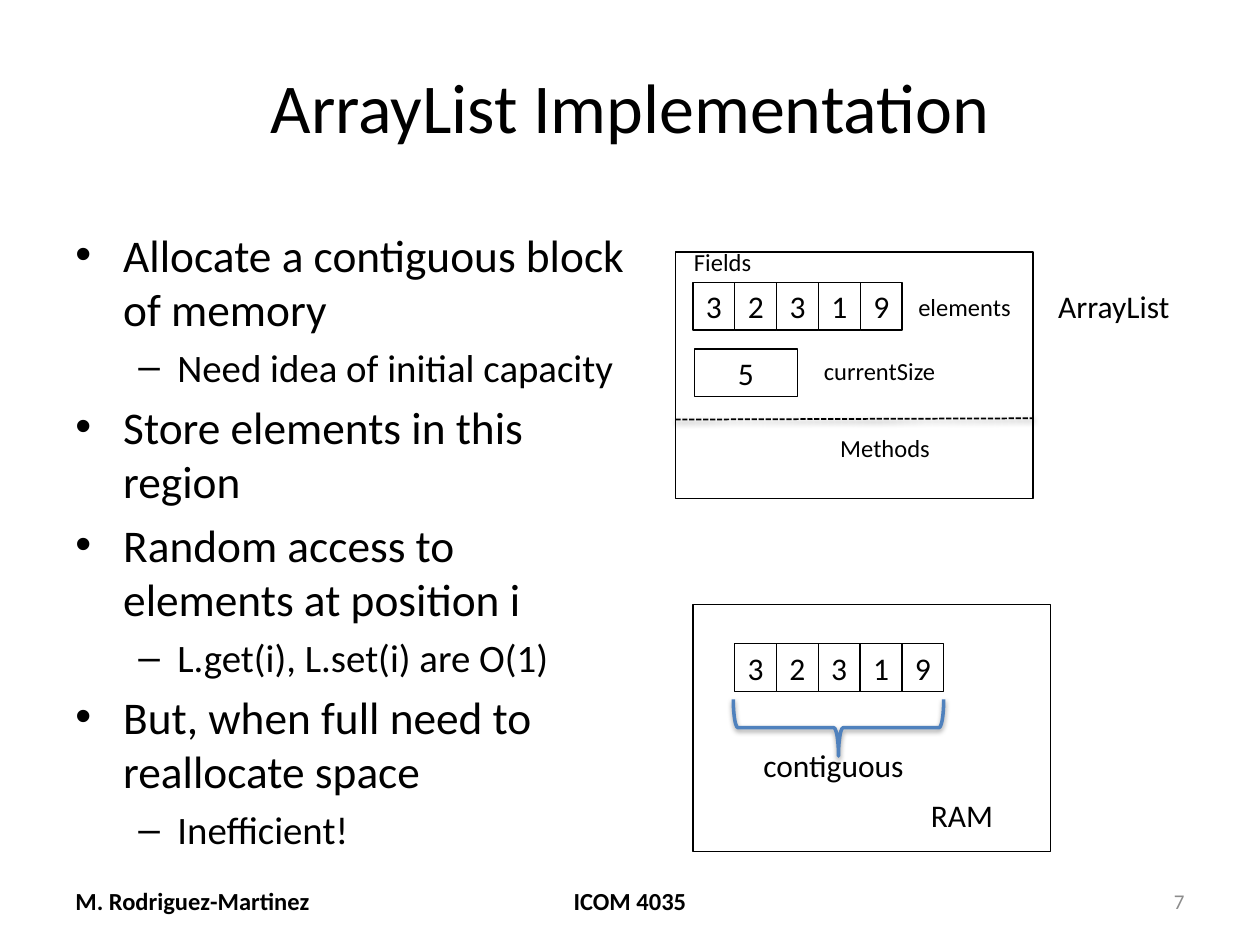
from dataclasses import dataclass

from lxml import etree
from pptx import Presentation
from pptx.dml.color import RGBColor
from pptx.enum.dml import MSO_LINE
from pptx.enum.shapes import MSO_CONNECTOR, MSO_SHAPE
from pptx.enum.text import MSO_ANCHOR, PP_ALIGN
from pptx.oxml.ns import qn
from pptx.util import Inches, Pt

RECT, BRACE = MSO_SHAPE.RECTANGLE, MSO_SHAPE.LEFT_BRACE
LEFT, MID, RIGHT = PP_ALIGN.LEFT, PP_ALIGN.CENTER, PP_ALIGN.RIGHT
TOP, CENTER = MSO_ANCHOR.TOP, MSO_ANCHOR.MIDDLE
DASH = MSO_LINE.SQUARE_DOT


@dataclass(frozen=True)
class Theme:
    face: str = "Calibri"
    ink: RGBColor = RGBColor(0, 0, 0)
    paper: RGBColor = RGBColor(255, 255, 255)
    gray: RGBColor = RGBColor(0x8C, 0x8C, 0x8C)
    blue: RGBColor = RGBColor(0x4F, 0x81, 0xBD)
    title: float = 40
    body: tuple = (25.9, 22.2)
    label: float = 18
    small: float = 14
    page: float = 12


T = Theme()
VALUES = "32319"
POINTS = [
    (0, "Allocate a contiguous block of memory"),
    (1, "Need idea of initial capacity"),
    (0, "Store elements in this region"),
    (0, "Random access to elements at position i"),
    (1, "L.get(i), L.set(i) are O(1)"),
    (0, "But, when full need to reallocate space"),
    (1, "Inefficient!"),
]
# Bullet sign, left margin and hanging indent of each level
LEVELS = [("•", 0.38, -0.38), ("–", 0.81, -0.31)]


def style(para, size, color=T.ink, align=LEFT, bold=False):
    para.alignment = align
    font = para.font
    font.name, font.size, font.bold = T.face, Pt(size), bold
    font.color.rgb = color


def add_text(slide, box, text, size, color=T.ink, align=LEFT,
             anchor=TOP, bold=False, wrap=False):
    frame = slide.shapes.add_textbox(*map(Inches, box)).text_frame
    frame.word_wrap = wrap
    frame.vertical_anchor = anchor
    frame.text = text
    style(frame.paragraphs[0], size, color, align, bold)


def add_box(slide, box, text=""):
    shape = slide.shapes.add_shape(RECT, *map(Inches, box))
    shape.shadow.inherit = False
    shape.fill.solid()
    shape.fill.fore_color.rgb = T.paper
    shape.line.color.rgb = T.ink
    shape.line.width = Pt(0.75)
    if text:
        frame = shape.text_frame
        frame.vertical_anchor = CENTER
        frame.text = text
        style(frame.paragraphs[0], T.label, align=MID)


def add_shadow(shape):
    """Cast a soft shadow straight down; call after the line is set."""
    effects = etree.SubElement(shape._element.spPr, qn("a:effectLst"))
    outer = etree.SubElement(effects, qn("a:outerShdw"), blurRad=str(Pt(3.1)),
                             dist=str(Pt(1.6)), dir="5400000", rotWithShape="0")
    color = etree.SubElement(outer, qn("a:srgbClr"), val=str(T.ink))
    etree.SubElement(color, qn("a:alpha"), val="38000")


def add_cells(slide, box):
    x, y, w, h = box
    step = w / len(VALUES)
    for i, value in enumerate(VALUES):
        add_box(slide, (x + i * step, y, step, h), value)


def add_points(slide, box):
    frame = slide.shapes.add_textbox(*map(Inches, box)).text_frame
    frame.word_wrap = True
    for i, (level, text) in enumerate(POINTS):
        para = frame.paragraphs[0] if i == 0 else frame.add_paragraph()
        para.text, para.level = text, level
        size = T.body[level]
        style(para, size)
        para.space_before = Pt(round(size * 0.2, 1))
        sign, margin, indent = LEVELS[level]
        props = para._p.get_or_add_pPr()
        props.set("marL", str(Inches(margin)))
        props.set("indent", str(Inches(indent)))
        font = etree.Element(qn("a:buFont"), typeface="Arial")
        mark = etree.Element(qn("a:buChar"), char=sign)
        props.find(qn("a:defRPr")).addprevious(font)
        font.addnext(mark)


def add_object(slide, box):
    """Draw the list object: fields above a dashed rule, methods below."""
    x, y, w, h = box
    add_box(slide, box)
    add_box(slide, (x + 0.15, y + 0.77, 0.82, 0.38), str(len(VALUES)))
    for dx, dy, width, text in [
        (0.05, -0.09, 0.66, "Fields"),
        (1.83, 0.27, 0.94, "elements"),
        (1.08, 0.78, 1.1, "currentSize"),
        (1.21, 1.39, 0.92, "Methods"),
    ]:
        add_text(slide, (x + dx, y + dy, width, 0.34), text, T.small)
    add_text(slide, (x + w + 0.1, y + 0.23, 1.11, 0.4), "ArrayList", T.label)
    ends = (x, y + 1.33, x + w, y + 1.32)
    rule = slide.shapes.add_connector(MSO_CONNECTOR.STRAIGHT, *map(Inches, ends))
    rule.line.color.rgb = T.ink
    rule.line.width = Pt(1)
    rule.line.dash_style = DASH
    add_shadow(rule)
    add_cells(slide, (x + 0.14, y + 0.24, 1.66, 0.38))


def add_memory(slide, box):
    """Draw the memory box with its cells braced as one block."""
    x, y, w, h = box
    add_box(slide, box)
    add_cells(slide, (x + 0.33, y + 0.31, 1.66, 0.38))
    add_text(slide, (x + 1.79, y + 1.47, 0.7, 0.4), "RAM", T.label)
    place = (x + 0.93, y + 0.14, 0.45, 1.67)
    brace = slide.shapes.add_shape(BRACE, *map(Inches, place))
    brace.rotation = 270
    brace.fill.background()
    brace.line.color.rgb = T.blue
    brace.line.width = Pt(2)
    add_shadow(brace)
    add_text(slide, (x + 0.46, y + 1.07, 1.33, 0.4), "contiguous", T.label)


def add_footer(slide, box):
    x, y, w, h = box
    side, main = 2.33, 3.17
    add_text(slide, (x, y, side, h), "M. Rodriguez-Martinez", T.small,
             anchor=CENTER, bold=True, wrap=True)
    add_text(slide, (x + (w - main) / 2, y, main, h), "ICOM 4035", T.small,
             align=MID, anchor=CENTER, bold=True, wrap=True)
    add_text(slide, (x + w - side, y, side, h), "7", T.page, T.gray,
             RIGHT, CENTER, wrap=True)


def main():
    deck = Presentation()
    deck.slide_width, deck.slide_height = Inches(10), Inches(7.5)
    slide = deck.slides.add_slide(deck.slide_layouts[6])
    add_text(slide, (0.5, 0.3, 9, 1.07), "ArrayList Implementation", T.title,
             align=MID, anchor=CENTER, wrap=True)
    add_points(slide, (0.5, 1.75, 4.56, 4.95))
    add_footer(slide, (0.5, 6.95, 9, 0.4))
    add_object(slide, (5.36, 2, 2.84, 1.96))
    add_memory(slide, (5.5, 4.8, 2.84, 1.96))
    deck.save("out.pptx")


if __name__ == "__main__":
    main()
